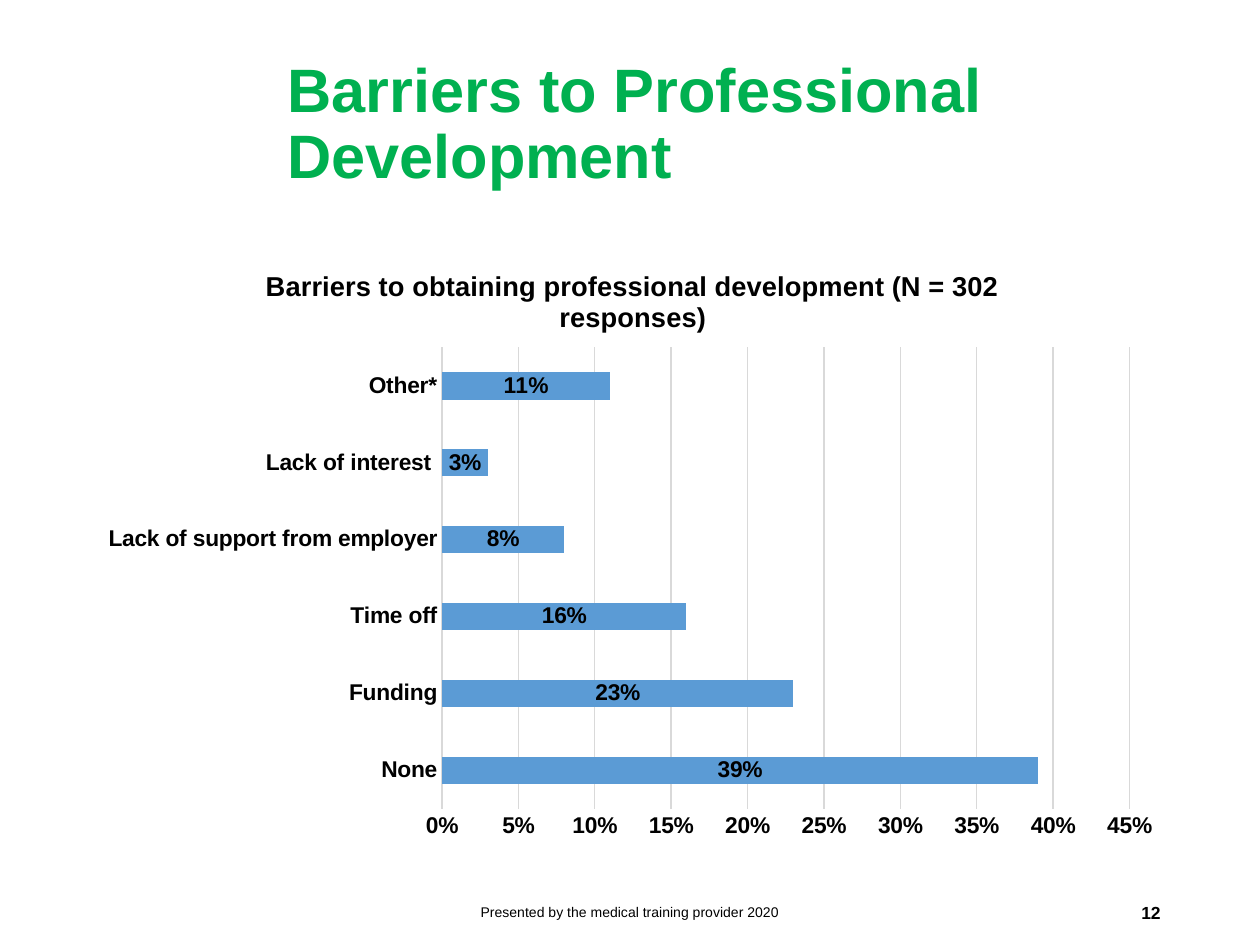
"""Build a slide with a bar chart of barriers to professional development."""
import pptx
import pptx.chart.data
import pptx.dml.color
import pptx.enum.chart
import pptx.enum.text
import pptx.oxml
import pptx.oxml.ns
import pptx.util

Inches = pptx.util.Inches
ALIGN = pptx.enum.text.PP_ALIGN

HEADING = "Barriers to Professional Development"
CHART_HEADING = "Barriers to obtaining professional development (N = 302 responses)"
BARRIERS = [
    ("None", 0.39),
    ("Funding", 0.23),
    ("Time off", 0.16),
    ("Lack of support from employer", 0.08),
    ("Lack of interest ", 0.03),
    ("Other*", 0.11),
]
FOOTERS = [
    ("Presented by the medical training provider 2020", 3.31, 3.38, ALIGN.CENTER, "footer", False),
    ("12", 7.06, 2.25, ALIGN.RIGHT, "number", True),
]
THEME = {
    "font": "Arial",
    "colors": {"heading": "00B050", "text": "000000", "bar": "5B9BD5", "grid": "D9D9D9"},
    "sizes": {"heading": 35, "chart_heading": 15.6, "chart": 13, "footer": 8, "number": 10},
}


def color(role):
    return pptx.dml.color.RGBColor.from_string(THEME["colors"][role])


def style(font, size, role="text", bold=True):
    font.name = THEME["font"]
    font.size = pptx.util.Pt(THEME["sizes"][size])
    font.bold = bold
    font.color.rgb = color(role)


def place(shape, left, top, width, height):
    shape.left, shape.top = Inches(left), Inches(top)
    shape.width, shape.height = Inches(width), Inches(height)


def set_layout(parent, index, **fractions):
    for old in parent.findall(pptx.oxml.ns.qn("c:layout")):
        parent.remove(old)
    target = '<c:layoutTarget val="inner"/>' if "w" in fractions else ""
    modes = "".join(f'<c:{key}Mode val="edge"/>' for key in "xy")
    values = "".join(f'<c:{key} val="{value}"/>' for key, value in fractions.items())
    parent.insert(index, pptx.oxml.parse_xml(
        f'<c:layout {pptx.oxml.ns.nsdecls("c")}><c:manualLayout>'
        f"{target}{modes}{values}</c:manualLayout></c:layout>"))


def grid_line(line):
    line.color.rgb = color("grid")
    line.width = pptx.util.Pt(0.75)


def add_heading(slide):
    heading = slide.shapes.title
    place(heading, 2.18, 0.27, 7.14, 1.45)
    frame = heading.text_frame
    frame.text = HEADING
    frame.word_wrap = True
    frame.vertical_anchor = pptx.enum.text.MSO_ANCHOR.MIDDLE
    paragraph = frame.paragraphs[0]
    paragraph.alignment = ALIGN.LEFT
    paragraph.line_spacing = 0.9
    style(paragraph.runs[0].font, "heading", "heading")


def add_footers(slide):
    for text, left, width, alignment, size, bold in FOOTERS:
        frame = slide.shapes.add_textbox(
            Inches(left), Inches(7.04), Inches(width), Inches(0.4)).text_frame
        frame.text = text
        frame.word_wrap = True
        frame.vertical_anchor = pptx.enum.text.MSO_ANCHOR.MIDDLE
        frame.paragraphs[0].alignment = alignment
        style(frame.paragraphs[0].runs[0].font, size, bold=bold)


def add_barrier_chart(slide):
    barriers = pptx.chart.data.CategoryChartData(number_format="0%")
    barriers.categories = [name for name, share in BARRIERS]
    barriers.add_series("Series 1", [share for name, share in BARRIERS])
    chart = slide.shapes.add_chart(
        pptx.enum.chart.XL_CHART_TYPE.BAR_CLUSTERED,
        Inches(0.69), Inches(1.9), Inches(8.62), Inches(4.85), barriers).chart
    chart.has_legend = False
    style(chart.font, "chart")

    chart.has_title = True
    title_frame = chart.chart_title.text_frame
    title_frame.text = CHART_HEADING
    style(title_frame.paragraphs[0].runs[0].font, "chart_heading")
    title_element = title_frame._txBody.getparent().getparent()
    set_layout(title_element, 1, x=0.16, y=0.04)
    set_layout(chart.plots[0]._element.getparent(), 0, x=0.327, y=0.177, w=0.633, h=0.755)

    for axis in (chart.category_axis, chart.value_axis):
        axis.major_tick_mark = axis.minor_tick_mark = pptx.enum.chart.XL_TICK_MARK.NONE
        style(axis.tick_labels.font, "chart")
    chart.category_axis.has_major_gridlines = False
    grid_line(chart.category_axis.format.line)
    shares = chart.value_axis
    shares.minimum_scale, shares.maximum_scale, shares.major_unit = 0, 0.45, 0.05
    shares.has_major_gridlines = True
    grid_line(shares.major_gridlines.format.line)
    shares.format.line.fill.background()
    shares.tick_labels.number_format = "0%"
    shares.tick_labels.number_format_is_linked = False

    plot = chart.plots[0]
    plot.gap_width = 182
    plot.vary_by_categories = False
    bars = plot.series[0]
    bars.format.fill.solid()
    bars.format.fill.fore_color.rgb = color("bar")
    labels = bars.data_labels
    labels.show_value = True
    labels.position = pptx.enum.chart.XL_LABEL_POSITION.CENTER
    labels.number_format = "0%"
    labels.number_format_is_linked = False
    style(labels.font, "chart")


def main():
    deck = pptx.Presentation()
    deck.slide_width, deck.slide_height = Inches(10), Inches(7.5)
    slide = deck.slides.add_slide(deck.slide_layouts.get_by_name("Title Only"))
    add_heading(slide)
    add_footers(slide)
    add_barrier_chart(slide)
    deck.save("out.pptx")


if __name__ == "__main__":
    main()
